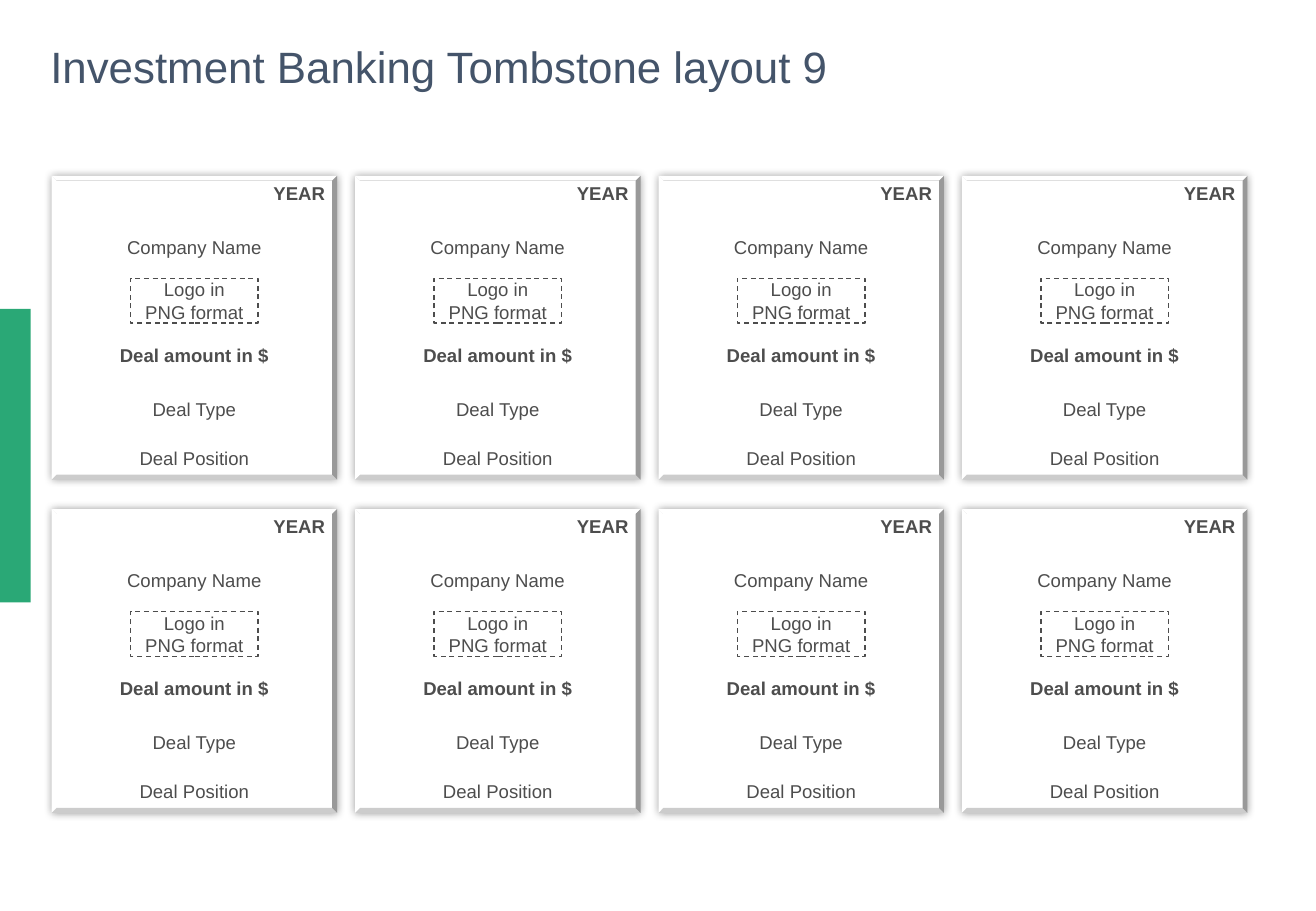
import dataclasses
import itertools

import lxml.etree
import pptx
import pptx.dml.color
import pptx.enum.dml
import pptx.enum.shapes
import pptx.enum.text
import pptx.oxml.ns
import pptx.util

Pt = pptx.util.Pt
Align = pptx.enum.text.PP_ALIGN
Anchor = pptx.enum.text.MSO_ANCHOR
Fit = pptx.enum.text.MSO_AUTO_SIZE
Kind = pptx.enum.shapes.MSO_SHAPE

COLORS = {
    "title": "44546A",
    "text": "4D4D4D",
    "card": "FFFFFF",
    "bar": "2AA876",
    "shadow": "000000",
}
FONT = "Arial"

# Card grid
COLS, ROWS = 4, 2
LEFT, TOP = 30.6, 104.3
STEP_X, STEP_Y = 179.85, 197.5
CARD_W, CARD_H = 169.2, 180


@dataclasses.dataclass
class Label:
    """A centred line of a card; top is measured from the card's top."""
    text: str
    top: float
    width: float
    height: float = 13.6
    bold: bool = False
    framed: bool = False


LABELS = [
    Label("Company Name", 35.4, 80),
    Label("Logo in\nPNG format", 60.6, 75.6, height=26.6, framed=True),
    Label("Deal amount in $", 99.2, 88.6, bold=True),
    Label("Deal Type", 131.2, 50.4),
    Label("Deal Position", 160.2, 65.5),
]


def rgb(name: str) -> pptx.dml.color.RGBColor:
    return pptx.dml.color.RGBColor.from_string(COLORS[name])


def write(shape, text: str, size: float, color: str, align, bold: bool = False) -> None:
    """Fill a shape with one paragraph, breaking it at line ends."""
    para = shape.text_frame.paragraphs[0]
    for i, line in enumerate(text.splitlines()):
        if i:
            para.add_line_break()
        para.add_run().text = line
    para.alignment = align
    para.font.name = FONT
    para.font.size = Pt(size)
    para.font.bold = bold
    para.font.color.rgb = rgb(color)


def inset(shape, left: float, top: float, right: float, bottom: float) -> None:
    frame = shape.text_frame
    frame.margin_left, frame.margin_top = Pt(left), Pt(top)
    frame.margin_right, frame.margin_bottom = Pt(right), Pt(bottom)


def add_block(shapes, kind, x: float, y: float, w: float, h: float, fill: str):
    """Draw a filled shape without an outline."""
    block = shapes.add_shape(kind, Pt(x), Pt(y), Pt(w), Pt(h))
    block.shadow.inherit = False
    block.fill.solid()
    block.fill.fore_color.rgb = rgb(fill)
    block.line.fill.background()
    return block


def add_glow(shape) -> None:
    """Give a shape a soft shadow on all sides."""
    qn = pptx.oxml.ns.qn
    effects = shape.element.spPr.find(qn("a:effectLst"))
    outer = lxml.etree.SubElement(
        effects, qn("a:outerShdw"), blurRad=str(Pt(5)), dist="0", dir="0",
        algn="ctr", rotWithShape="0")
    color = lxml.etree.SubElement(outer, qn("a:srgbClr"), val=COLORS["shadow"])
    lxml.etree.SubElement(color, qn("a:alpha"), val="40000")


def add_label(shapes, label: Label, x: float, y: float) -> None:
    """Draw one label centred in the card at x, y."""
    place = (Pt(x + (CARD_W - label.width) / 2), Pt(y + label.top),
             Pt(label.width), Pt(label.height))
    if label.framed:
        box = shapes.add_shape(Kind.RECTANGLE, *place)
        box.shadow.inherit = False
        box.fill.background()
        box.line.color.rgb = rgb("text")
        box.line.width = Pt(0.75)
        box.line.dash_style = pptx.enum.dml.MSO_LINE.DASH
    else:
        box = shapes.add_textbox(*place)
    inset(box, 0, 0, 0, 0)
    box.text_frame.word_wrap = label.framed
    box.text_frame.auto_size = Fit.SHAPE_TO_FIT_TEXT
    box.text_frame.vertical_anchor = Anchor.MIDDLE
    write(box, label.text, 11, "text", Align.CENTER, label.bold)


def add_card(shapes, x: float, y: float) -> None:
    """Draw a tombstone: bevelled card, year and grouped labels."""
    card = add_block(shapes, Kind.BEVEL, x, y, CARD_W, CARD_H, "card")
    card.adjustments[0] = 0.017
    add_glow(card)

    year = shapes.add_textbox(Pt(x), Pt(y), Pt(CARD_W), Pt(20.2))
    year.text_frame.word_wrap = True
    inset(year, 0, 3.6, 7.2, 3.6)
    write(year, "YEAR", 11, "text", Align.RIGHT, True)

    group = shapes.add_group_shape()
    for label in LABELS:
        add_label(group.shapes, label, x, y)


def main() -> None:
    deck = pptx.Presentation()
    deck.slide_width, deck.slide_height = Pt(780), Pt(540)
    slide = deck.slides.add_slide(deck.slide_layouts[5])

    # Side bar
    add_block(slide.shapes, Kind.RECTANGLE, 0, 183.1, 18.2, 174, "bar")

    # Title
    title = slide.shapes.title
    title.left, title.top = Pt(29.8), Pt(23.2)
    title.width, title.height = Pt(710), Pt(31.6)
    inset(title, 0, 0, 0, 0)
    title.text_frame.word_wrap = True
    title.text_frame.auto_size = Fit.SHAPE_TO_FIT_TEXT
    title.text_frame.vertical_anchor = Anchor.MIDDLE
    write(title, "Investment Banking Tombstone layout 9", 26, "title", Align.LEFT)

    # Tombstones
    for row, col in itertools.product(range(ROWS), range(COLS)):
        add_card(slide.shapes, LEFT + col * STEP_X, TOP + row * STEP_Y)

    deck.save("out.pptx")


if __name__ == "__main__":
    main()
